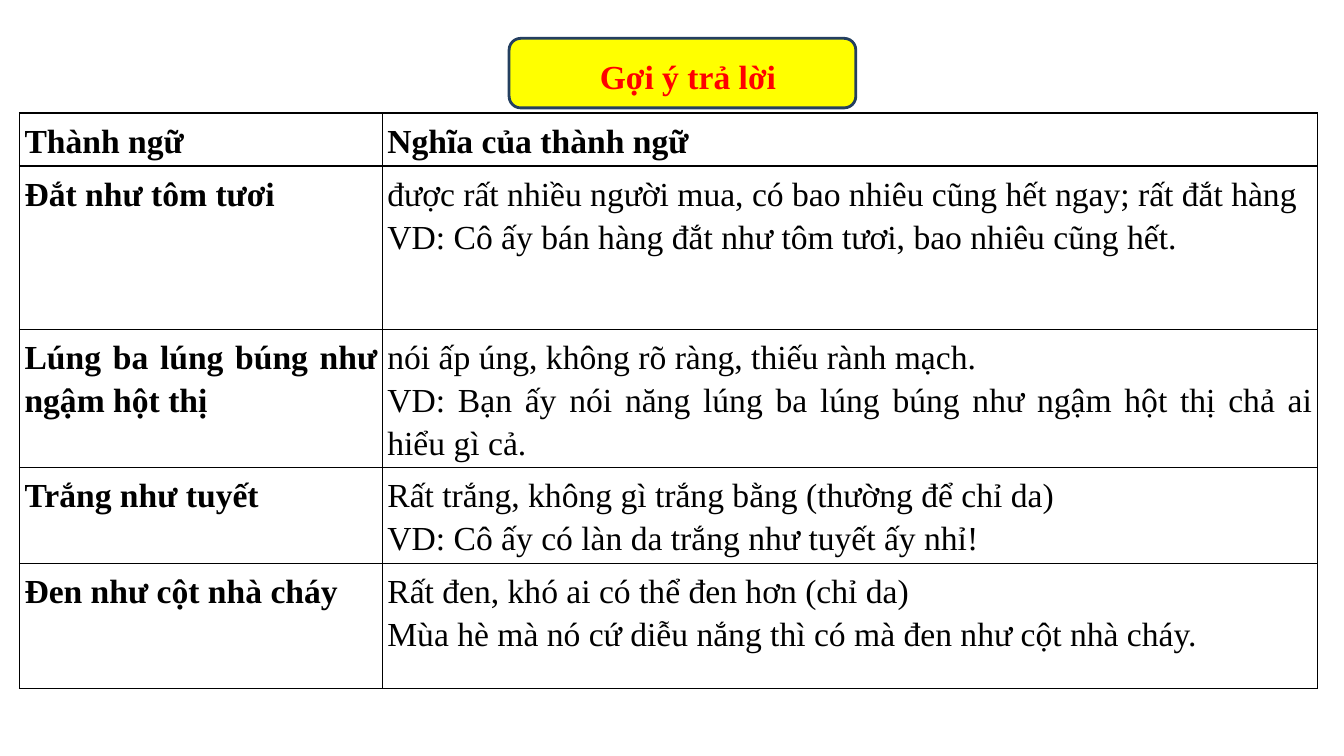
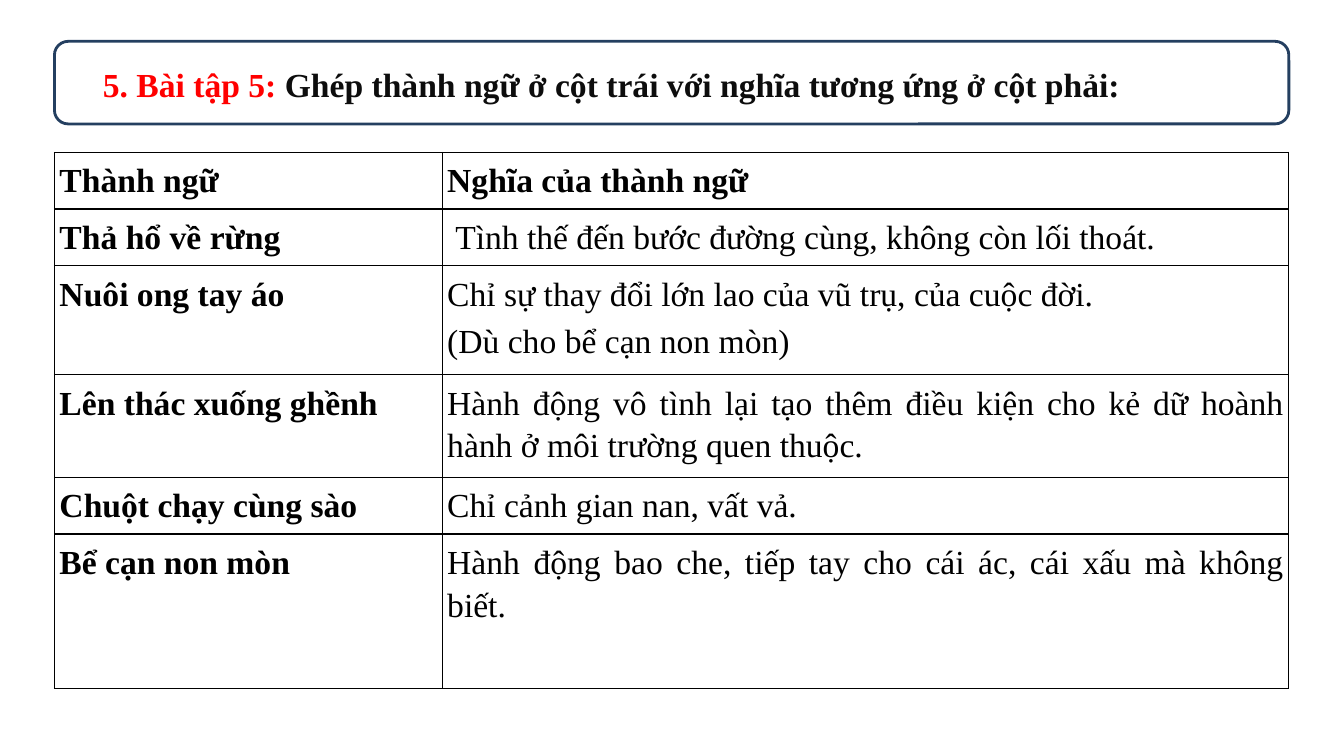
from lxml import etree
from pptx import Presentation
from pptx.dml.color import RGBColor
from pptx.enum.shapes import MSO_SHAPE
from pptx.enum.text import MSO_ANCHOR, MSO_AUTO_SIZE, PP_ALIGN
from pptx.oxml.ns import qn
from pptx.util import Inches, Pt

ROUNDED = MSO_SHAPE.ROUNDED_RECTANGLE
TOP = MSO_ANCHOR.TOP
NO_AUTOFIT = MSO_AUTO_SIZE.NONE
JUSTIFY = PP_ALIGN.JUSTIFY

COLORS = {
    "paper": "FFFFFF",
    "ink": "000000",
    "heading": "0D0D0D",
    "accent": "FF0000",
    "highlight": "FFFF00",
    "frame": "243F60",
}
FONT = "Times New Roman"
TEXT_SIZE = 24
LINE_SPACING = 1.15
CELL_MARGIN = Inches(0.05)
TITLE_ONLY = 5
HEADER = ("Thành ngữ", ["Nghĩa của thành ngữ"])


def color(name):
    return RGBColor.from_string(COLORS[name])


class Deck:
    """Holds the shared style and the current slide; lengths are percent of the slide."""

    def __init__(self):
        self.presentation = Presentation()
        self.presentation.slide_width = Inches(13.333)
        self.presentation.slide_height = Inches(7.5)
        self.slide = None

    def across(self, percent):
        return round(self.presentation.slide_width * percent / 100)

    def down(self, percent):
        return round(self.presentation.slide_height * percent / 100)

    def box(self, left, top, width, height):
        return self.across(left), self.down(top), self.across(width), self.down(height)

    def add_slide(self):
        layout = self.presentation.slide_layouts[TITLE_ONLY]
        self.slide = self.presentation.slides.add_slide(layout)

    def fill_paragraph(self, paragraph, runs):
        """Fill a paragraph with (text, color name, bold) runs."""
        paragraph.alignment = JUSTIFY
        paragraph.line_spacing = LINE_SPACING
        for text, color_name, bold in runs:
            run = paragraph.add_run()
            run.text = text
            run.font.name = FONT
            run.font.size = Pt(TEXT_SIZE)
            run.font.bold = bold
            run.font.color.rgb = color(color_name)

    def banner(self, box, fill=None):
        shape = self.slide.shapes.add_shape(ROUNDED, *self.box(*box))
        shape.shadow.inherit = False
        shape.line.color.rgb = color("frame")
        shape.line.width = Pt(2)
        if fill:
            shape.fill.solid()
            shape.fill.fore_color.rgb = color(fill)
        else:
            shape.fill.background()

    def title(self, box, runs):
        """Place the title placeholder in front of the banner."""
        title = self.slide.shapes.title
        title.left, title.top, title.width, title.height = self.box(*box)
        frame = title.text_frame
        frame.word_wrap = True
        frame.auto_size = NO_AUTOFIT
        frame.vertical_anchor = TOP
        self.fill_paragraph(frame.paragraphs[0], [(text, name, True) for text, name in runs])
        self.slide.shapes._spTree.append(title._element)

    def border(self, cell):
        properties = cell._tc.get_or_add_tcPr()
        for side in ("a:lnL", "a:lnR", "a:lnT", "a:lnB"):
            line = etree.SubElement(properties, qn(side), w=str(Pt(1)))
            fill = etree.SubElement(line, qn("a:solidFill"))
            etree.SubElement(fill, qn("a:srgbClr"), val=COLORS["ink"])

    def cell(self, cell, lines, bold, gap):
        cell.margin_left = cell.margin_right = CELL_MARGIN
        cell.margin_top = cell.margin_bottom = CELL_MARGIN
        self.border(cell)
        cell.fill.solid()
        cell.fill.fore_color.rgb = color("paper")
        frame = cell.text_frame
        for index, line in enumerate(lines):
            paragraph = frame.add_paragraph() if index else frame.paragraphs[0]
            self.fill_paragraph(paragraph, [(line, "ink", bold)])
            if index < len(lines) - 1:
                paragraph.space_after = Pt(gap)

    def idiom_table(self, corner, widths, heights, idioms, gap=0):
        """Draw idioms beside their meanings, under the common header row."""
        rows = [HEADER, *idioms]
        box = self.box(*corner, sum(widths), sum(heights))
        table = self.slide.shapes.add_table(len(rows), len(widths), *box).table
        table.first_row = table.horz_banding = False
        for column, width in zip(table.columns, widths):
            column.width = self.across(width)
        for index, (height, (idiom, meaning)) in enumerate(zip(heights, rows)):
            table.rows[index].height = self.down(height)
            self.cell(table.cell(index, 0), [idiom], True, gap)
            self.cell(table.cell(index, 1), meaning, index == 0, gap)
        return table


def answers_slide(deck):
    deck.add_slide()
    deck.banner((37.88, 5.07, 25.8, 9.2), "highlight")
    deck.idiom_table(
        (1.45, 14.95), (27, 69.6), (7, 21.6, 18.25, 12.7, 16.5),
        [
            ("Đắt như tôm tươi", [
                "được rất nhiều người mua, có bao nhiêu cũng hết ngay; rất đắt hàng",
                "VD: Cô ấy bán hàng đắt như tôm tươi, bao nhiêu cũng hết.",
            ]),
            ("Lúng ba lúng búng như ngậm hột thị", [
                "nói ấp úng, không rõ ràng, thiếu rành mạch.",
                "VD: Bạn ấy nói năng lúng ba lúng búng như ngậm hột thị chả ai hiểu gì cả.",
            ]),
            ("Trắng như tuyết", [
                "Rất trắng, không gì trắng bằng (thường để chỉ da)",
                "VD: Cô ấy có làn da trắng như tuyết ấy nhỉ!",
            ]),
            ("Đen như cột nhà cháy", [
                "Rất đen, khó ai có thể đen hơn (chỉ da)",
                "Mùa hè mà nó cứ diễu nắng thì có mà đen như cột nhà cháy.",
            ]),
        ],
    )
    deck.title((43.88, 5.87, 19.8, 7.07), [("Gợi ý trả lời", "accent")])


def matching_slide(deck):
    deck.add_slide()
    deck.banner((4.05, 5.47, 91.85, 10.93))
    deck.title((6.9, 6.93, 86.2, 7.07), [
        ("5. Bài tập 5: ", "accent"),
        ("Ghép thành ngữ ở cột trái với nghĩa tương ứng ở cột phải:", "heading"),
    ])
    table = deck.idiom_table(
        (4.05, 20.15), (28.85, 63), (7.5, 7.5, 14.4, 13.6, 7.5, 20.4),
        [
            ("Thả hổ về rừng", ["Tình thế đến bước đường cùng, không còn lối thoát."]),
            ("Nuôi ong tay áo", [
                "Chỉ sự thay đổi lớn lao của vũ trụ, của cuộc đời.",
                "(Dù cho bể cạn non mòn)",
            ]),
            ("Lên thác xuống ghềnh", [
                "Hành động vô tình lại tạo thêm điều kiện cho kẻ dữ "
                "hoành hành ở môi trường quen thuộc.",
            ]),
            ("Chuột chạy cùng sào", ["Chỉ cảnh gian nan, vất vả."]),
            ("Bể cạn non mòn", [
                "Hành động bao che, tiếp tay cho cái ác, cái xấu mà không biết.",
            ]),
        ],
        gap=3.6,
    )
    table.cell(1, 1).margin_left = CELL_MARGIN + Inches(0.08)


def main():
    deck = Deck()
    answers_slide(deck)
    matching_slide(deck)
    deck.presentation.save("out.pptx")


if __name__ == "__main__":
    main()
